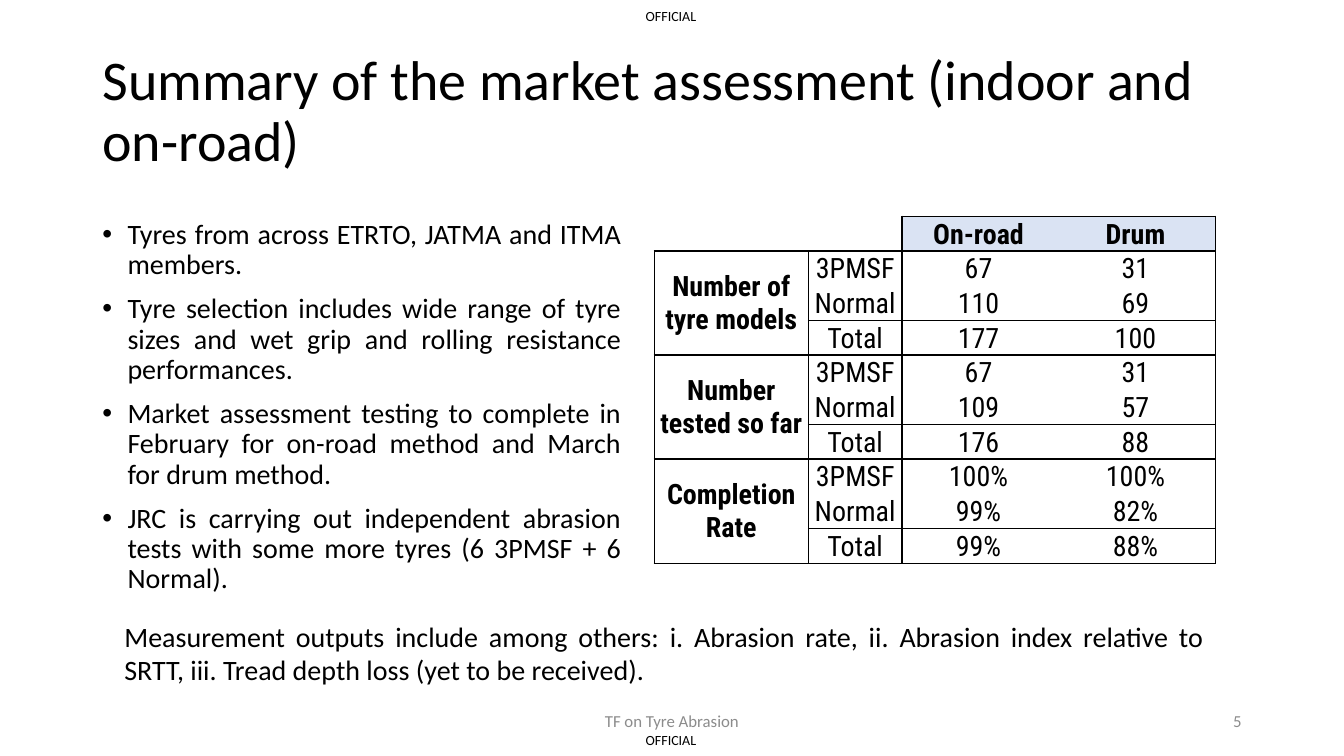
from lxml import etree
from pptx import Presentation
from pptx import util as u
from pptx.dml import color
from pptx.enum import text
from pptx.oxml import ns

SCALE = 9525
COLORS = {"ink": "000000", "muted": "8C8C8C", "header": "DAE3F3"}
ALIGN, ANCHOR = text.PP_ALIGN, text.MSO_ANCHOR

TITLE = "Summary of the market assessment (indoor and on-road)"
BULLETS = [
    "Tyres from across ETRTO, JATMA and ITMA members.",
    "Tyre selection includes wide range of tyre sizes and wet grip and rolling resistance performances.",
    "Market assessment testing to complete in February for on-road method and March for drum method.",
    "JRC is carrying out independent abrasion tests with some more tyres (6 3PMSF + 6 Normal).",
]
NOTE = ("Measurement outputs include among others: i. Abrasion rate, ii. Abrasion index "
        "relative to SRTT, iii. Tread depth loss (yet to be received).")
METHODS = ["On-road", "Drum"]
CLASSES = ["3PMSF", "Normal", "Total"]
GROUPS = [
    ("Number of tyre models", [("67", "31"), ("110", "69"), ("177", "100")]),
    ("Number tested so far", [("67", "31"), ("109", "57"), ("176", "88")]),
    ("Completion Rate", [("100%", "100%"), ("99%", "82%"), ("99%", "88%")]),
]
TABLE_LEFT, TABLE_TOP, ROW_HEIGHT = 623, 206, 32
COLUMN_WIDTHS = [147, 89, 146, 153]

PLAIN = {"size": 20, "name": "Calibri", "color": "ink"}
MARKING = PLAIN | {"size": 10}
FOOTER = PLAIN | {"size": 12, "color": "muted"}
CELL = PLAIN | {"name": "Roboto Condensed", "bold": False}
BODY_PARAGRAPH = {"alignment": ALIGN.JUSTIFY, "line_spacing": 0.9, "space_before": u.Pt(10)}
NO_MARGINS = dict.fromkeys(["margin_left", "margin_right", "margin_top", "margin_bottom"], 0)
CELL_MARGINS = NO_MARGINS | dict.fromkeys(["margin_left", "margin_right", "margin_top"], SCALE)

TEXT_BOXES = [
    ((615, 7, 51, 16), ["OFFICIAL"], MARKING, {}, NO_MARGINS | {"word_wrap": False}),
    ((615, 697, 51, 16), ["OFFICIAL"], MARKING, {}, NO_MARGINS | {"word_wrap": False}),
    ((424, 667, 432, 38), ["TF on Tyre Abrasion"], FOOTER, {"alignment": ALIGN.CENTER},
     {"vertical_anchor": ANCHOR.MIDDLE}),
    ((904, 667, 288, 38), ["5"], FOOTER, {"alignment": ALIGN.RIGHT},
     {"vertical_anchor": ANCHOR.MIDDLE}),
    ((109, 585, 1047, 75), [NOTE], PLAIN, {"alignment": ALIGN.JUSTIFY}, {}),
]


def px(*lengths):
    return [u.Emu(length * SCALE) for length in lengths]


def assign(target, values):
    for name, value in values.items():
        setattr(target, name, value)


def write(frame, lines, font, paragraph_format):
    frame.text = "\n".join(lines)
    for paragraph in frame.paragraphs:
        assign(paragraph, paragraph_format)
        for run in paragraph.runs:
            values = dict(font)
            run.font.color.rgb = color.RGBColor.from_string(COLORS[values.pop("color")])
            assign(run.font, values | {"size": u.Pt(values["size"])})


def add_text(slide, box, lines, font, paragraph_format, frame_format):
    frame = slide.shapes.add_textbox(*px(*box)).text_frame
    assign(frame, {"word_wrap": True} | frame_format)
    write(frame, lines, font, paragraph_format)
    return frame


def add_bullet(paragraph):
    properties = paragraph._p.get_or_add_pPr()
    indent = 24 * SCALE
    properties.set("marL", str(indent))
    properties.set("indent", str(-indent))
    etree.SubElement(properties, ns.qn("a:buFont"), typeface="Arial")
    etree.SubElement(properties, ns.qn("a:buChar"), char="•")


def line_above(row, column):
    if row == 0:
        return column >= 2
    return row % 3 == 1 or (row % 3 == 0 and column >= 1)


def line_left(row, column):
    return column != 3 and (row > 0 or column >= 2)


def draw_borders(cell, row, column, span):
    sides = {
        "L": line_left(row, column),
        "R": line_left(row, column + 1),
        "T": line_above(row, column),
        "B": line_above(row + span, column),
    }
    properties = cell._tc.get_or_add_tcPr()
    for position, (side, visible) in enumerate(sides.items()):
        line = etree.Element(ns.qn(f"a:ln{side}"), w=str(u.Pt(1)))
        if visible:
            fill = etree.SubElement(line, ns.qn("a:solidFill"))
            etree.SubElement(fill, ns.qn("a:srgbClr"), val=COLORS["ink"])
        else:
            etree.SubElement(line, ns.qn("a:noFill"))
        properties.insert(position, line)


def add_results(slide):
    rows = [["", "", *METHODS]]
    for group, results in GROUPS:
        for index, values in enumerate(results):
            rows.append([group if index == 0 else "", CLASSES[index], *values])
    box = px(TABLE_LEFT, TABLE_TOP, sum(COLUMN_WIDTHS), ROW_HEIGHT * len(rows))
    table = slide.shapes.add_table(len(rows), len(COLUMN_WIDTHS), *box).table
    assign(table, {"first_row": False, "horz_banding": False})
    for column, width in zip(table.columns, px(*COLUMN_WIDTHS)):
        column.width = width
    for row, labels in enumerate(rows):
        for column, label in enumerate(labels):
            cell = table.cell(row, column)
            is_group = column == 0 and row % 3 == 1
            anchor = ANCHOR.MIDDLE if is_group else ANCHOR.BOTTOM
            assign(cell, CELL_MARGINS | {"vertical_anchor": anchor})
            write(cell.text_frame, [label], CELL | {"bold": row == 0 or column == 0},
                  {"alignment": ALIGN.CENTER})
            if row == 0 and column >= 2:
                cell.fill.solid()
                cell.fill.fore_color.rgb = color.RGBColor.from_string(COLORS["header"])
            else:
                cell.fill.background()
            draw_borders(cell, row, column, len(CLASSES) if is_group else 1)
            if is_group:
                cell.merge(table.cell(row + len(CLASSES) - 1, column))


def main():
    presentation = Presentation()
    presentation.slide_width, presentation.slide_height = px(1280, 720)
    slide = presentation.slides.add_slide(presentation.slide_layouts[5])

    title = slide.shapes.title
    assign(title, dict(zip(["left", "top", "width", "height"], px(88, 38, 1104, 139))))
    assign(title.text_frame, {"vertical_anchor": ANCHOR.MIDDLE, "word_wrap": True,
                              "auto_size": text.MSO_AUTO_SIZE.NONE})
    write(title.text_frame, [TITLE], PLAIN | {"size": 40},
          {"alignment": ALIGN.LEFT, "line_spacing": 0.9})

    for text_box in TEXT_BOXES:
        add_text(slide, *text_box)
    body = add_text(slide, (88, 205, 513, 319), BULLETS, PLAIN, BODY_PARAGRAPH, {})
    for paragraph in body.paragraphs:
        add_bullet(paragraph)
    add_results(slide)
    presentation.save("out.pptx")


if __name__ == "__main__":
    main()
